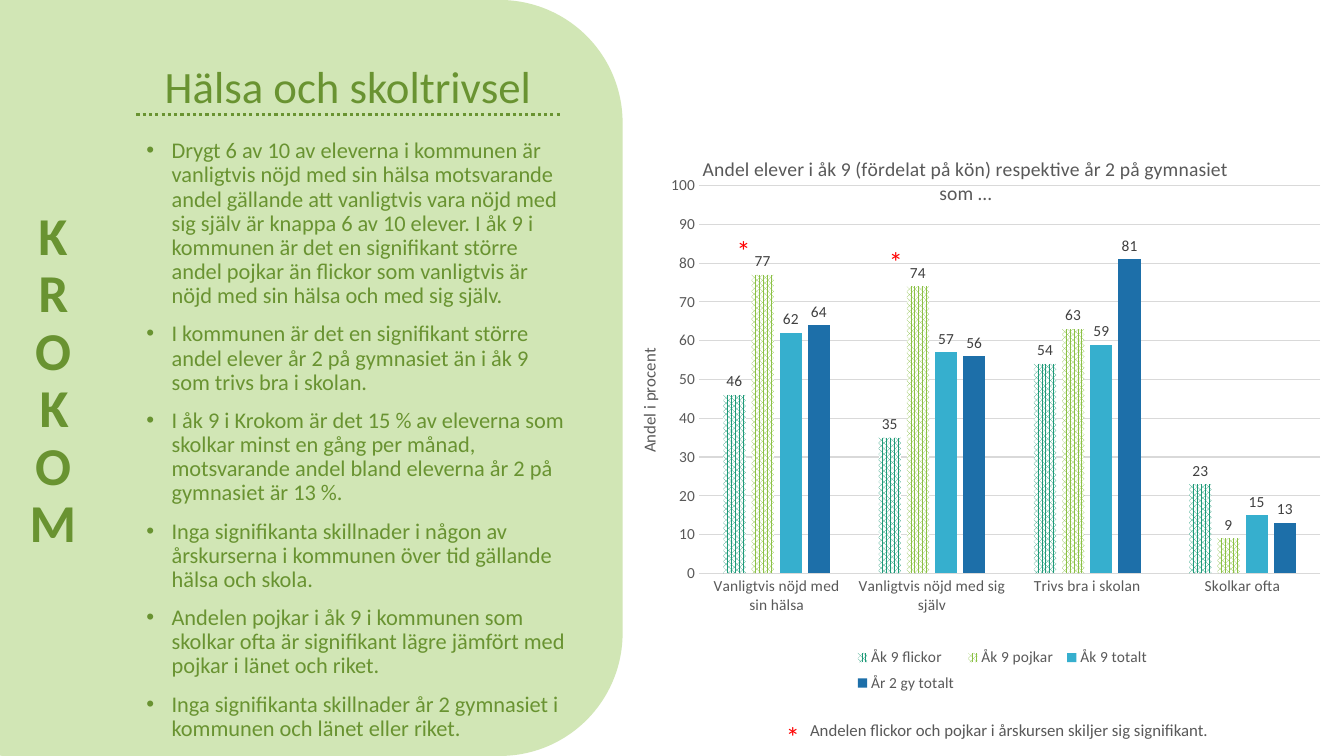
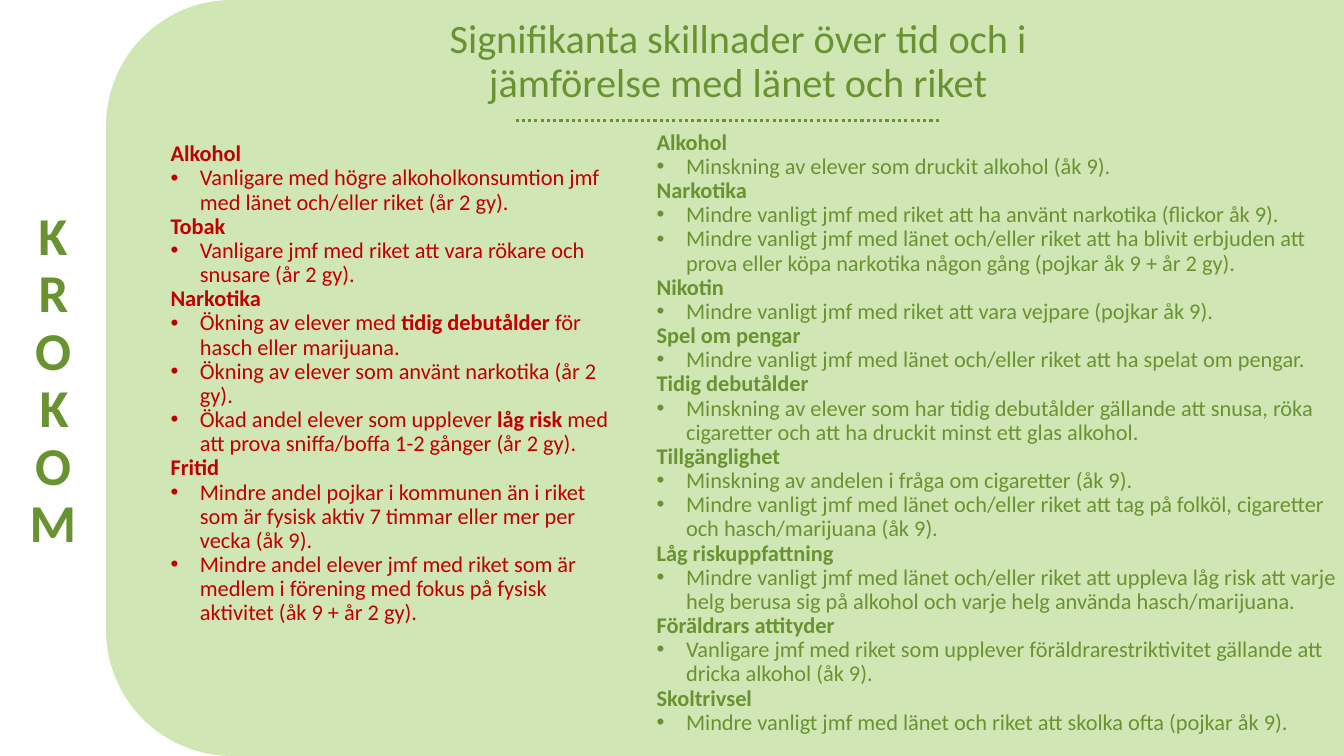
"""Build two slides on pupils' health and habits in one municipality."""
from dataclasses import dataclass

from lxml import etree
from pptx import Presentation
from pptx import util as u
from pptx.chart.data import CategoryChartData
from pptx.dml.color import RGBColor
from pptx.enum import chart as charts, dml, shapes, text
from pptx.oxml.ns import qn

PX = 9525


@dataclass(frozen=True)
class Theme:
    """Colours, font and type sizes of the presentation."""
    font: str = "Calibri"
    panel: str = "D1E6B5"
    green: str = "699331"
    red: str = "C00000"
    star: str = "FF0000"
    grey: str = "595959"
    label: str = "404040"
    grid: str = "D9D9D9"
    white: str = "FFFFFF"
    girls: str = "1D9A78"
    boys: str = "8BC145"
    all_nine: str = "36AFCE"
    all_upper: str = "1D6FA9"
    title: float = 32
    small_title: float = 28.8
    side: float = 38
    body: float = 16
    mark: float = 20
    note: float = 12
    chart_title: float = 14
    chart: float = 11


THEME = Theme()


def style_font(font, size, color, bold=False):
    """Set face, size, colour and weight of a font."""
    font.name = THEME.font
    font.size = u.Pt(size)
    font.bold = bold
    font.color.rgb = RGBColor.from_string(color)


def write(paragraph, content, *, size=THEME.body, color=THEME.green, bold=False,
          align=None, spacing=None, before=0, hanging=0):
    """Write text into a paragraph; bars enclose bold words and a leading • makes a bullet."""
    paragraph.alignment = align
    paragraph.line_spacing = spacing
    paragraph.space_before = u.Pt(before)
    if content.startswith("• "):
        content = content[2:]
        properties = paragraph._p.get_or_add_pPr()
        properties.set("marL", str(hanging * PX))
        properties.set("indent", str(-hanging * PX))
        etree.SubElement(properties, qn("a:buFont")).set("typeface", "Arial")
        etree.SubElement(properties, qn("a:buChar")).set("char", "•")
    for index, part in enumerate(content.split("|")):
        if part:
            run = paragraph.add_run()
            run.text = part
            style_font(run.font, size, color, bold or index % 2 == 1)


def place(element, position, **measures):
    """Give a chart part a manual layout in fractions of the chart."""
    for old in element.findall(qn("c:layout")):
        element.remove(old)
    layout = etree.Element(qn("c:layout"))
    manual = etree.SubElement(layout, qn("c:manualLayout"))
    if "target" in measures:
        etree.SubElement(manual, qn("c:layoutTarget")).set("val", measures.pop("target"))
    for mode in ("xMode", "yMode"):
        etree.SubElement(manual, qn(f"c:{mode}")).set("val", "edge")
    for name, value in measures.items():
        etree.SubElement(manual, qn(f"c:{name}")).set("val", str(value))
    element.insert(position, layout)


class Deck:
    """Hold the presentation, its style and the current slide."""

    def __init__(self, theme):
        """Start an empty widescreen presentation."""
        self.theme = theme
        self.presentation = Presentation()
        self.presentation.slide_width = 1280 * PX
        self.presentation.slide_height = 720 * PX
        self.slide = None

    def new_slide(self, panel_left, panel_width):
        """Add a slide with its green panel and side name."""
        self.slide = self.presentation.slides.add_slide(self.presentation.slide_layouts[6])
        self.panel(panel_left, panel_width)
        self.side_name("KROKOM")

    def panel(self, left, width):
        """Draw the rounded panel at full height."""
        shape = self.slide.shapes.add_shape(
            shapes.MSO_SHAPE.ROUNDED_RECTANGLE, left * PX, 0, width * PX, 720 * PX)
        shape.shadow.inherit = False
        shape.fill.solid()
        shape.fill.fore_color.rgb = RGBColor.from_string(self.theme.panel)
        shape.line.fill.background()

    def text(self, box, lines, anchor=text.MSO_ANCHOR.TOP, **style):
        """Add a text box with one paragraph a line."""
        frame = self.slide.shapes.add_textbox(*(value * PX for value in box)).text_frame
        frame.word_wrap = True
        frame.vertical_anchor = anchor
        for index, line in enumerate(lines):
            write(frame.add_paragraph() if index else frame.paragraphs[0], line, **style)
        return frame

    def side_name(self, name):
        """Stack the name's letters along the left edge."""
        frame = self.text((0, 13, 101, 701), [name], text.MSO_ANCHOR.BOTTOM,
                          size=self.theme.side, bold=True,
                          align=text.PP_ALIGN.CENTER, spacing=0.9)
        frame._txBody.bodyPr.set("vert", "wordArtVert")

    def title(self, box, content, size):
        """Add a centred title."""
        self.text(box, [content], text.MSO_ANCHOR.MIDDLE, size=size,
                  align=text.PP_ALIGN.CENTER, spacing=0.9)

    def dotted_line(self, left, top):
        """Draw the dotted rule below a title."""
        line = self.slide.shapes.add_connector(
            shapes.MSO_CONNECTOR.STRAIGHT, left * PX, top * PX, (left + 404) * PX, top * PX)
        line.line.color.rgb = RGBColor.from_string(self.theme.green)
        line.line.width = u.Pt(2.25)
        line.line.dash_style = dml.MSO_LINE.ROUND_DOT
        etree.SubElement(line._element.spPr, qn("a:effectLst"))

    def topics(self, box, topics, color):
        """List bold headings, each with its bullets."""
        lines = []
        for heading, items in topics.items():
            lines.append(f"|{heading}|")
            lines.extend(f"• {item}" for item in items)
        self.text(box, lines, color=color, spacing=0.9, hanging=28)

    def star(self, left, top):
        """Mark a significant difference."""
        self.text((left, top, 46, 66), ["*"], size=self.theme.mark, color=self.theme.star)

    def column_chart(self, box, title, axis_title, categories, series):
        """Add a clustered column chart; series holds name, values, colour and hatching."""
        theme = self.theme
        data = CategoryChartData(number_format="0")
        data.categories = categories
        for name, values, _, _ in series:
            data.add_series(name, values)
        chart = self.slide.shapes.add_chart(
            charts.XL_CHART_TYPE.COLUMN_CLUSTERED, *(value * PX for value in box), data).chart
        style_font(chart.font, theme.chart, theme.grey)

        chart.has_title = True
        write(chart.chart_title.text_frame.paragraphs[0], title,
              size=theme.chart_title, color=theme.grey)
        place(chart.chart_title._element, 1, x=0.11, y=0.03)

        chart.has_legend = True
        chart.legend.position = charts.XL_LEGEND_POSITION.BOTTOM
        chart.legend.include_in_layout = False
        style_font(chart.legend.font, theme.chart, theme.grey)
        place(chart.legend._element, 1, x=0.32, y=0.89, w=0.43, h=0.1)

        self.axes(chart, axis_title)
        plot = chart.plots[0]
        plot.gap_width, plot.overlap = 219, -27
        plot.vary_by_categories = False
        for column, (_, _, color, hatched) in zip(plot.series, series):
            self.column_style(column, color, hatched)
        place(chart._chartSpace.chart.plotArea, 0, target="inner",
              x=0.11, y=0.09, w=0.87, h=0.68)

    def axes(self, chart, axis_title):
        """Style both axes and the gridlines."""
        theme = self.theme
        value_axis, category_axis = chart.value_axis, chart.category_axis
        for axis in (value_axis, category_axis):
            axis.major_tick_mark = axis.minor_tick_mark = charts.XL_TICK_MARK.NONE
            style_font(axis.tick_labels.font, theme.chart, theme.grey)
        value_axis.minimum_scale, value_axis.maximum_scale = 0, 100
        value_axis.major_unit = 10
        value_axis.format.line.fill.background()
        for line in (value_axis.major_gridlines.format.line, category_axis.format.line):
            line.color.rgb = RGBColor.from_string(theme.grid)
            line.width = u.Pt(0.75)
        frame = value_axis.axis_title.text_frame
        write(frame.paragraphs[0], axis_title, size=theme.note, color=theme.grey)
        frame._txBody.bodyPr.set("rot", "-5400000")
        frame._txBody.bodyPr.set("vert", "horz")
        place(value_axis.axis_title._element, 1, x=0.02, y=0.37)

    def column_style(self, column, color, hatched):
        """Fill one series and show its values."""
        fill = column.format.fill
        if hatched:
            fill.patterned()
            fill.pattern = dml.MSO_PATTERN.PERCENT_75
            fill.back_color.rgb = RGBColor.from_string(self.theme.white)
        else:
            fill.solid()
        fill.fore_color.rgb = RGBColor.from_string(color)
        column.invert_if_negative = False
        labels = column.data_labels
        labels.show_value = True
        labels.position = charts.XL_LABEL_POSITION.OUTSIDE_END
        labels.number_format, labels.number_format_is_linked = "0", False
        style_font(labels.font, self.theme.chart, self.theme.label)


def health_slide(deck):
    """Build the slide on health and well-being at school."""
    theme = deck.theme
    deck.new_slide(-109, 702)
    deck.title((115, 42, 433, 85), "Hälsa och skoltrivsel", theme.title)
    deck.dotted_line(130, 109)
    deck.text((130, 128, 419, 553), [
        "• Drygt 6 av 10 av eleverna i kommunen är vanligtvis nöjd med sin hälsa motsvarande "
        "andel gällande att vanligtvis vara nöjd med sig själv är knappa 6 av 10 elever. "
        "I åk 9 i kommunen är det en signifikant större andel pojkar än flickor som "
        "vanligtvis är nöjd med sin hälsa och med sig själv.",
        "• I kommunen är det en signifikant större andel elever år 2 på gymnasiet än i åk 9 "
        "som trivs bra i skolan.",
        "• I åk 9 i Krokom är det 15 % av eleverna som skolkar minst en gång per månad, "
        "motsvarande andel bland eleverna år 2 på gymnasiet är 13 %.",
        "• Inga signifikanta skillnader i någon av årskurserna i kommunen över tid gällande "
        "hälsa och skola.",
        "• Andelen pojkar i åk 9 i kommunen som skolkar ofta är signifikant lägre jämfört med "
        "pojkar i länet och riket.",
        "• Inga signifikanta skillnader år 2 gymnasiet i kommunen och länet eller riket.",
    ], spacing=0.9, before=10, hanging=24)
    deck.column_chart(
        (591, 128, 680, 543),
        "Andel elever i åk 9 (fördelat på kön) respektive år 2 på gymnasiet som …",
        "Andel i procent",
        ["Vanligtvis nöjd med sin hälsa", "Vanligtvis nöjd med sig själv",
         "Trivs bra i skolan", "Skolkar ofta"],
        [("Åk 9 flickor", (46, 35, 54, 23), theme.girls, True),
         ("Åk 9 pojkar", (77, 74, 63, 9), theme.boys, True),
         ("Åk 9 totalt", (62, 57, 59, 15), theme.all_nine, False),
         ("År 2 gy totalt", (64, 56, 81, 13), theme.all_upper, False)])
    for left, top in ((739, 681), (692, 218), (837, 228)):
        deck.star(left, top)
    deck.text((762, 681, 452, 29),
              ["Andelen flickor och pojkar i årskursen skiljer sig signifikant."],
              size=theme.note, color=theme.grey)


def differences_slide(deck):
    """Build the slide on significant differences."""
    theme = deck.theme
    deck.new_slide(101, 1302)
    deck.topics((153, 131, 449, 563), {
        "Alkohol": ["Vanligare med högre alkoholkonsumtion jmf med länet och/eller riket (år 2 gy)."],
        "Tobak": ["Vanligare jmf med riket att vara rökare och snusare (år 2 gy)."],
        "Narkotika": [
            "Ökning av elever med |tidig debutålder |för hasch eller marijuana.",
            "Ökning av elever som använt narkotika (år 2 gy).",
            "Ökad andel elever som upplever |låg risk |med att prova sniffa/boffa 1-2 gånger (år 2 gy)."],
        "Fritid": [
            "Mindre andel pojkar i kommunen än i riket som är fysisk aktiv 7 timmar eller mer "
            "per vecka (åk 9).",
            "Mindre andel elever jmf med riket som är medlem i förening med fokus på fysisk "
            "aktivitet (åk 9 + år 2 gy)."],
    }, theme.red)
    deck.topics((616, 120, 673, 591), {
        "Alkohol": ["Minskning av elever som druckit alkohol (åk 9)."],
        "Narkotika": [
            "Mindre vanligt jmf med riket att ha använt narkotika (flickor åk 9).",
            "Mindre vanligt jmf med länet och/eller riket att ha blivit erbjuden att prova "
            "eller köpa narkotika någon gång (pojkar åk 9 + år 2 gy)."],
        "Nikotin": ["Mindre vanligt jmf med riket att vara vejpare (pojkar åk 9)."],
        "Spel om pengar": ["Mindre vanligt jmf med länet och/eller riket att ha spelat om pengar."],
        "Tidig debutålder": [
            "Minskning av elever som har tidig debutålder gällande att snusa, röka cigaretter "
            "och att ha druckit minst ett glas alkohol."],
        "Tillgänglighet": [
            "Minskning av andelen i fråga om cigaretter (åk 9).",
            "Mindre vanligt jmf med länet och/eller riket att tag på folköl, cigaretter och "
            "hasch/marijuana (åk 9)."],
        "Låg riskuppfattning": [
            "Mindre vanligt jmf med länet och/eller riket att uppleva låg risk att varje helg "
            "berusa sig på alkohol och varje helg använda hasch/marijuana."],
        "Föräldrars attityder": [
            "Vanligare jmf med riket som upplever föräldrarestriktivitet gällande att dricka "
            "alkohol (åk 9)."],
        "Skoltrivsel": ["Mindre vanligt jmf med länet och riket att skolka ofta (pojkar åk 9)."],
    }, theme.green)
    deck.dotted_line(491, 115)
    deck.title((416, 17, 574, 85),
               "Signifikanta skillnader över tid och i jämförelse med länet och riket",
               theme.small_title)


def main():
    """Build and save the presentation."""
    deck = Deck(THEME)
    health_slide(deck)
    differences_slide(deck)
    deck.presentation.save("out.pptx")


if __name__ == "__main__":
    main()
